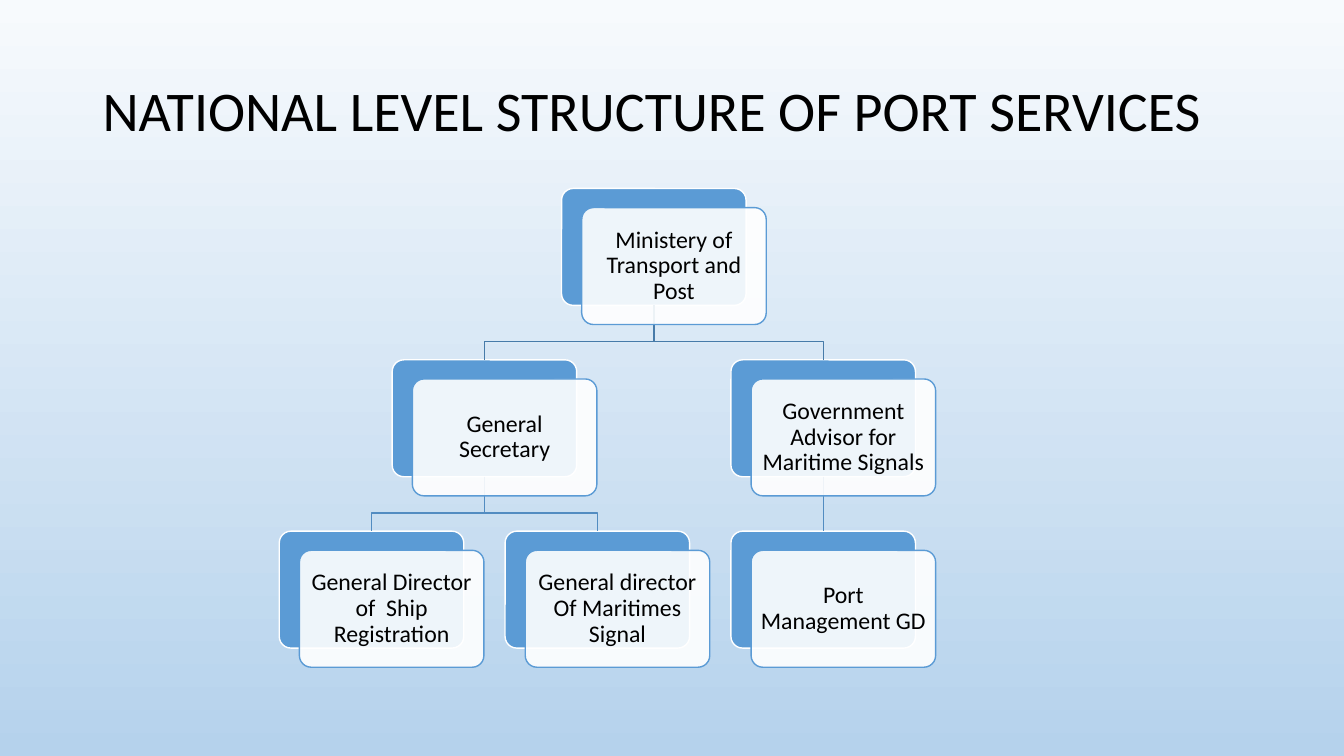
from dataclasses import dataclass
from typing import Any

from lxml.etree import SubElement
from pptx import Presentation
from pptx.dml.color import RGBColor
from pptx.enum.shapes import MSO_CONNECTOR, MSO_SHAPE
from pptx.enum.text import MSO_ANCHOR, PP_ALIGN
from pptx.oxml.ns import qn
from pptx.util import Inches, Pt

BLACK = RGBColor(0x00, 0x00, 0x00)
WHITE = RGBColor(0xFF, 0xFF, 0xFF)
BLUE = RGBColor(0x5B, 0x9B, 0xD5)
PALE = RGBColor(0xF7, 0xFA, 0xFD)
SKY = RGBColor(0xB5, 0xD2, 0xEC)
LINKS = (RGBColor(0x47, 0x7B, 0xA9), RGBColor(0x52, 0x8C, 0xC1))

# Chart grid in inches: origin, pitch, box size, card offset
LEFT, TOP = 2.77, 1.87
COL, ROW = 2.24, 1.7
WIDE, HIGH = 1.83, 1.16
SHIFT_X, SHIFT_Y = 0.2, 0.19
BEND = 0.36

FRAME = {"word_wrap": True, "vertical_anchor": MSO_ANCHOR.MIDDLE}
INSET = dict.fromkeys(
    ("margin_left", "margin_right", "margin_top", "margin_bottom"), Inches(0.06))
CARD_PARA = {"alignment": PP_ALIGN.CENTER, "line_spacing": 0.9, "space_after": Pt(7)}
TITLE_PARA = {"alignment": PP_ALIGN.LEFT, "line_spacing": 0.9}


@dataclass(frozen=True)
class Node:
    text: str
    col: float
    row: int
    boss: int | None = None

    @property
    def left(self) -> float:
        return LEFT + self.col * COL

    @property
    def top(self) -> float:
        return TOP + self.row * ROW

    @property
    def mid(self) -> float:
        return self.left + WIDE / 2


NODES = (
    Node("Ministery of Transport and Post", 1.25, 0),
    Node("General Secretary", 0.5, 1, 0),
    Node("Government Advisor for Maritime Signals", 2, 1, 0),
    Node("General Director of  Ship Registration", 0, 2, 1),
    Node("General director Of Maritimes Signal", 1, 2, 1),
    Node("Port Management GD", 2, 2, 2),
)


def apply(item: Any, form: dict[str, Any]) -> None:
    for key, value in form.items():
        setattr(item, key, value)


def write(shape: Any, text: str, size: int, frame: dict, para: dict) -> None:
    apply(shape.text_frame, frame)
    line = shape.text_frame.paragraphs[0]
    apply(line, para)
    run = line.add_run()
    run.text = text
    apply(run.font, {"name": "Calibri", "size": Pt(size)})
    run.font.color.rgb = BLACK


def stroke(shape: Any, color: RGBColor) -> None:
    shape.line.color.rgb = color
    shape.line.width = Pt(1)


def box(slide: Any, left: float, top: float, fill: RGBColor, edge: RGBColor) -> Any:
    shape = slide.shapes.add_shape(
        MSO_SHAPE.ROUNDED_RECTANGLE,
        Inches(left), Inches(top), Inches(WIDE), Inches(HIGH))
    shape.adjustments[0] = 0.1
    shape.shadow.inherit = False
    shape.fill.solid()
    shape.fill.fore_color.rgb = fill
    stroke(shape, edge)
    return shape


def card(slide: Any, node: Node) -> None:
    shape = box(slide, node.left + SHIFT_X, node.top + SHIFT_Y, WHITE, BLUE)
    color = shape._element.spPr.find(qn("a:solidFill")).find(qn("a:srgbClr"))
    SubElement(color, qn("a:alpha"), val="90000")
    write(shape, node.text, 17, FRAME | INSET, CARD_PARA)


def link(slide: Any, boss: Node, node: Node, ends: tuple[Any, Any]) -> None:
    low = boss.top + HIGH
    if boss.col == node.col:
        line = slide.shapes.add_connector(
            MSO_CONNECTOR.STRAIGHT, Inches(boss.mid), Inches(low),
            Inches(node.mid), Inches(node.top))
        line.begin_connect(ends[0], 2)
        line.end_connect(ends[1], 0)
        SubElement(line._element.spPr, qn("a:effectLst"))
    else:
        bend = low + BEND
        turns = ((boss.mid, bend), (node.mid, bend), (node.mid, node.top))
        path = slide.shapes.build_freeform(Inches(boss.mid), Inches(low))
        path.add_line_segments([(Inches(x), Inches(y)) for x, y in turns], close=False)
        line = path.convert_to_shape()
        line.fill.background()
        line.shadow.inherit = False
    stroke(line, LINKS[boss.row])


def main() -> None:
    deck = Presentation()
    apply(deck, {"slide_width": Inches(13.33), "slide_height": Inches(7.5)})
    slide = deck.slides.add_slide(deck.slide_layouts[6])

    # Background
    fill = slide.background.fill
    fill.gradient()
    fill.gradient_angle = 270
    for stop, color in zip(fill.gradient_stops, (PALE, SKY)):
        stop.color.rgb = color

    # Title
    title = slide.shapes.add_textbox(
        Inches(0.92), Inches(0.4), Inches(11.5), Inches(1.45))
    write(title, "NATIONAL LEVEL STRUCTURE OF PORT SERVICES", 40, FRAME, TITLE_PARA)

    # Back boxes, links, then text cards
    backs = [box(slide, node.left, node.top, BLUE, WHITE) for node in NODES]
    for node, back in zip(NODES, backs):
        if node.boss is not None:
            link(slide, NODES[node.boss], node, (backs[node.boss], back))
    for node in NODES:
        card(slide, node)

    deck.save("out.pptx")


if __name__ == "__main__":
    main()
